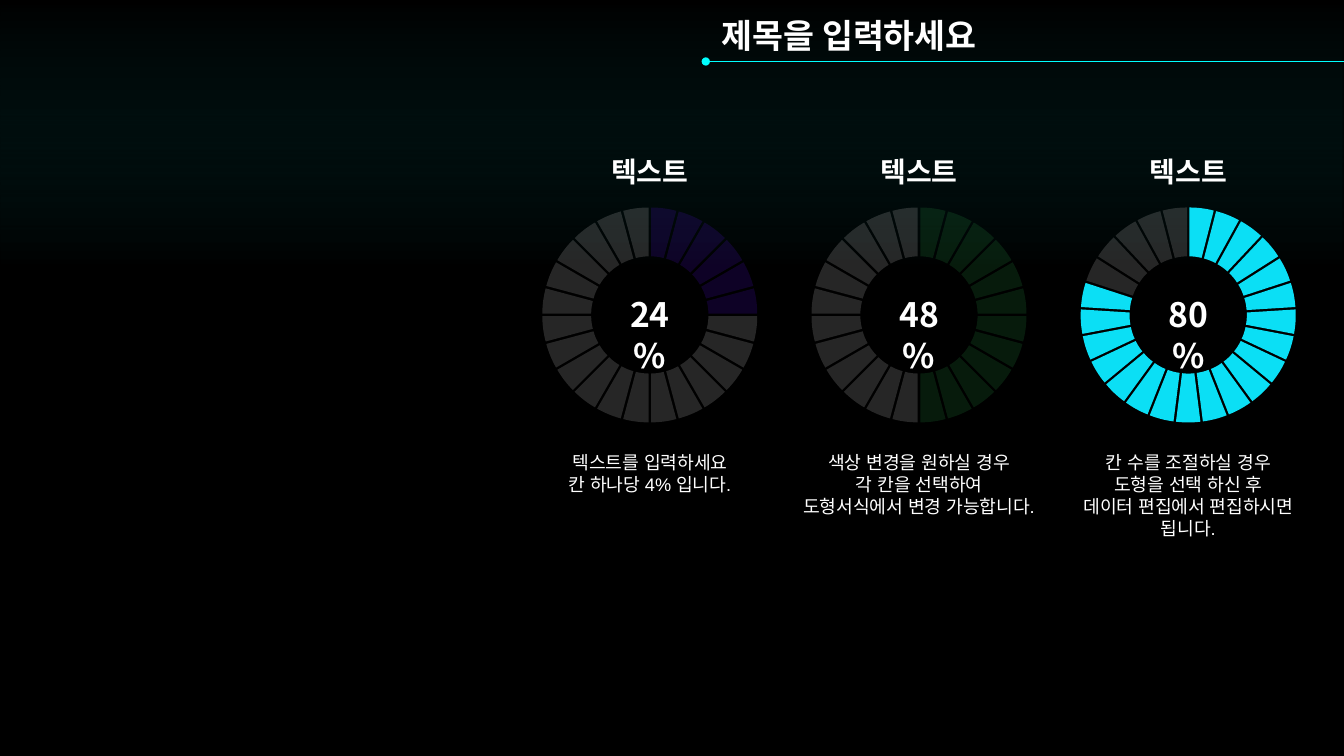
"""Build a dark slide with three segmented doughnut gauges."""
from lxml import etree
from pptx import Presentation
from pptx.chart.data import CategoryChartData
from pptx.dml.color import RGBColor
from pptx.enum.chart import XL_CHART_TYPE
from pptx.enum.shapes import MSO_CONNECTOR, MSO_SHAPE
from pptx.enum.text import MSO_AUTO_SIZE, PP_ALIGN
from pptx.oxml import parse_xml
from pptx.oxml.ns import qn
from pptx.util import Inches, Pt

DOUGHNUT = XL_CHART_TYPE.DOUGHNUT
STRAIGHT = MSO_CONNECTOR.STRAIGHT
RECTANGLE = MSO_SHAPE.RECTANGLE
FIT_SHAPE = MSO_AUTO_SIZE.SHAPE_TO_FIT_TEXT
LEFT, CENTER = PP_ALIGN.LEFT, PP_ALIGN.CENTER
DRAWING = "http://schemas.openxmlformats.org/drawingml/2006/main"
CHART = "http://schemas.openxmlformats.org/drawingml/2006/chart"

COLORS = {
    "background": "000000", "glow": "003E3E", "text": "FFFFFF", "line": "00FFFF",
    "empty": "FFFFFF", "purple": "6414FF", "green": "30BA54", "cyan": "0BDFF5",
}
HEADING_FONT, BODY_FONT = "Noto Sans CJK KR", "Arial"
WIDTH, HEIGHT = 13.33, 7.5
FIRST_COLUMN, COLUMN_STEP, GAUGE_WIDTH, GAUGE_HEIGHT = 5.16, 2.67, 2.57, 2.41
GAUGE_TOP = 1.92
FAINT = 15

GAUGES = [
    ("24%", 24, 6, "purple", FAINT, 2.57, 0.54,
     ["텍스트를 입력하세요", "칸 하나당 4% 입니다."]),
    ("48%", 24, 12, "green", FAINT, 2.77, 0.76,
     ["색상 변경을 원하실 경우", "각 칸을 선택하여", "도형서식에서 변경 가능합니다."]),
    ("80%", 25, 20, "cyan", 100, 2.57, 0.98,
     ["칸 수를 조절하실 경우", "도형을 선택 하신 후", "데이터 편집에서 편집하시면 됩니다."]),
]


def add_text(slide, box, lines, size, font_name, bold, align, wrap):
    shape = slide.shapes.add_textbox(*(Inches(length) for length in box))
    frame = shape.text_frame
    frame.text = "\n".join(lines)
    frame.word_wrap = wrap
    frame.auto_size = FIT_SHAPE
    for paragraph in frame.paragraphs:
        paragraph.alignment = align
        for run in paragraph.runs:
            run.font.name = font_name
            run.font.size = Pt(size)
            run.font.bold = bold
            run.font.color.rgb = RGBColor.from_string(COLORS["text"])
            latin = run.font._element.find(qn("a:latin"))
            east_asian = etree.Element(qn("a:ea"), typeface=font_name)
            latin.addnext(east_asian)


def set_alpha(fill_parent, percent):
    color = fill_parent.find(".//" + qn("a:srgbClr"))
    etree.SubElement(color, qn("a:alpha"), val=str(percent * 1000))


presentation = Presentation()
presentation.slide_width = Inches(WIDTH)
presentation.slide_height = Inches(HEIGHT)
slide = presentation.slides.add_slide(presentation.slide_layouts[6])
slide.background.fill.solid()
slide.background.fill.fore_color.rgb = RGBColor.from_string(COLORS["background"])

glow = slide.shapes.add_shape(RECTANGLE, 0, 0, Inches(WIDTH), Inches(HEIGHT))
glow.shadow.inherit = False
glow.line.fill.background()
gradient = parse_xml(
    f'<a:gradFill xmlns:a="{DRAWING}" rotWithShape="1"><a:gsLst>'
    f'<a:gs pos="0"><a:srgbClr val="{COLORS["glow"]}"><a:alpha val="0"/></a:srgbClr></a:gs>'
    f'<a:gs pos="36000"><a:srgbClr val="{COLORS["background"]}"><a:alpha val="89000"/>'
    '</a:srgbClr></a:gs></a:gsLst><a:lin ang="5400000" scaled="0"/></a:gradFill>')
glow._element.spPr.find(qn("a:prstGeom")).addnext(gradient)

title_line = slide.shapes.add_connector(
    STRAIGHT, Inches(WIDTH), Inches(0.61), Inches(7), Inches(0.61))
title_line.line.color.rgb = RGBColor.from_string(COLORS["line"])
title_line.line.width = Pt(0.5)
line_properties = title_line._element.spPr
etree.SubElement(line_properties.find(qn("a:ln")), qn("a:tailEnd"), type="oval")
etree.SubElement(line_properties, qn("a:effectLst"))

add_text(slide, (7.06, 0.1, 3.01, 0.5), ["제목을 입력하세요"], 24, HEADING_FONT, True, LEFT, False)

for column, gauge in enumerate(GAUGES):
    percent, segments, filled, color, opacity, note_width, note_height, note = gauge
    left = FIRST_COLUMN + column * COLUMN_STEP
    middle = left + GAUGE_WIDTH / 2

    data = CategoryChartData()
    data.categories = [str(number) for number in range(1, segments + 1)]
    data.add_series("Series 1", [4] * segments)
    chart = slide.shapes.add_chart(
        DOUGHNUT, Inches(left), Inches(GAUGE_TOP),
        Inches(GAUGE_WIDTH), Inches(GAUGE_HEIGHT), data).chart
    chart.has_legend = False
    chart.has_title = False
    chart.font.size = Pt(10)
    chart.font.name = HEADING_FONT
    chart.font.color.rgb = RGBColor.from_string(COLORS["text"])

    chart_space = chart._chartSpace
    chart_space.find(qn("c:chart")).addnext(parse_xml(
        f'<c:spPr xmlns:c="{CHART}" xmlns:a="{DRAWING}">'
        '<a:noFill/><a:ln><a:noFill/></a:ln></c:spPr>'))
    chart_space.find(".//" + qn("c:holeSize")).set("val", "62")

    series = chart.plots[0].series[0]
    for index in range(segments):
        is_filled = index < filled
        point = series.points[index]
        point.format.fill.solid()
        point.format.fill.fore_color.rgb = RGBColor.from_string(
            COLORS[color if is_filled else "empty"])
        point.format.line.fill.background()
    points = series._element.findall(qn("c:dPt"))
    for index, point_element in enumerate(points):
        set_alpha(point_element, opacity if index < filled else FAINT)
    points[0].addprevious(etree.Element(qn("c:explosion"), val="20"))

    add_text(slide, (middle - 0.445, 2.87, 0.89, 0.5), [percent],
             24, HEADING_FONT, True, CENTER, True)
    add_text(slide, (middle - 0.52, 1.48, 1.04, 0.44), ["텍스트"],
             20, HEADING_FONT, True, CENTER, False)
    add_text(slide, (middle - note_width / 2, 4.43, note_width, note_height), note,
             13, BODY_FONT, False, CENTER, True)

presentation.save("out.pptx")
